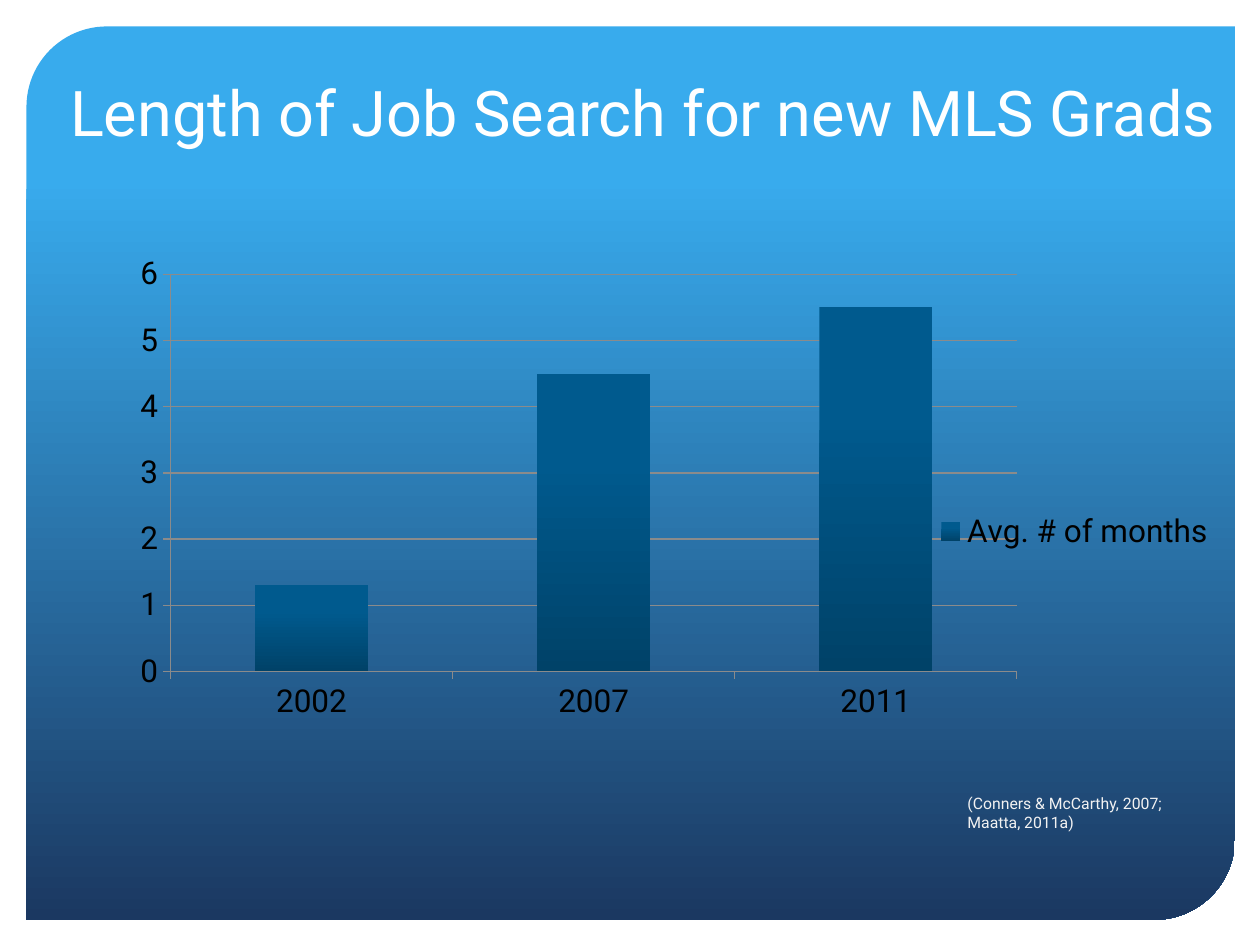
from lxml import etree
from pptx import Presentation
from pptx.chart.data import CategoryChartData
from pptx.dml.color import RGBColor
from pptx.enum.chart import XL_CHART_TYPE as ChartType, XL_LEGEND_POSITION as LegendPos, XL_TICK_MARK as Tick
from pptx.enum.shapes import MSO_SHAPE as Preset
from pptx.enum.text import MSO_ANCHOR as Anchor, MSO_AUTO_SIZE as AutoSize, PP_ALIGN as Align
from pptx.oxml.ns import qn
from pptx.util import Inches, Pt

COLORS = {
    "panel_top": "38ABED", "panel_bottom": "1B3861",
    "bar_top": "005A8E", "bar_bottom": "004268",
    "grid": "8B8B8B", "title": "FFFFFF", "citation": "F2F2F2", "label": "000000",
}
FONT = "Roboto"


class SlideBuilder:
    """Holds the style and the current slide."""

    def __init__(self, slide):
        self.slide = slide

    def color(self, name):
        return RGBColor.from_string(COLORS[name])

    def style_font(self, font, size, color):
        font.name, font.size = FONT, Pt(size)
        font.color.rgb = self.color(color)

    def gradient(self, fill, top, bottom, start):
        """Vertical gradient that begins to change at the given share."""
        fill.gradient()
        fill.gradient_angle = 270
        for stop, name, position in zip(fill.gradient_stops, (top, bottom), (start, 1)):
            stop.color.rgb = self.color(name)
            stop.position = position

    def panel(self, left, top, width, height, rounding):
        panel = self.slide.shapes.add_shape(
            Preset.ROUND_2_DIAG_RECTANGLE, *map(Inches, (left, top, width, height)))
        panel.shadow.inherit = False
        panel.adjustments[0] = rounding
        self.gradient(panel.fill, "panel_top", "panel_bottom", 0.17)
        panel.line.fill.background()

    def text(self, words, left, top, width, height, size, color, align=Align.LEFT,
             anchor=Anchor.TOP, bottom=0.05, fit=AutoSize.NONE):
        frame = self.slide.shapes.add_textbox(
            *map(Inches, (left, top, width, height))).text_frame
        frame.word_wrap = True
        frame.auto_size = fit
        frame.vertical_anchor = anchor
        frame.margin_bottom = Inches(bottom)
        paragraph = frame.paragraphs[0]
        paragraph.text = words
        paragraph.alignment = align
        self.style_font(paragraph.font, size, color)

    def column_chart(self, left, top, width, height, series_name, values, plot_area):
        data = CategoryChartData()
        data.categories = list(values)
        data.add_series(series_name, values.values())
        chart = self.slide.shapes.add_chart(
            ChartType.COLUMN_CLUSTERED, *map(Inches, (left, top, width, height)), data).chart
        self.style_font(chart.font, 18, "label")
        chart.has_title = False

        # Legend
        chart.has_legend = True
        chart.legend.position = LegendPos.RIGHT
        chart.legend.include_in_layout = False

        # Columns
        columns = chart.plots[0]
        columns.vary_by_categories = False
        columns.gap_width = 150
        self.gradient(columns.series[0].format.fill, "bar_top", "bar_bottom", 0.3)

        # Axes and gridlines
        scale = chart.value_axis
        scale.minimum_scale, scale.maximum_scale, scale.major_unit = 0, 6, 1
        scale.has_major_gridlines = True
        for axis in (chart.category_axis, scale):
            axis.major_tick_mark = Tick.OUTSIDE
        for part in (chart.category_axis, scale, scale.major_gridlines):
            part.format.line.color.rgb = self.color("grid")
            part.format.line.width = Pt(0.75)

        self.place_plot(columns, plot_area)

    def place_plot(self, plot, area):
        """Fix the inner plot area as shares of the chart."""
        plot_xml = plot._element.getparent()
        for old in plot_xml.findall(qn("c:layout")):
            plot_xml.remove(old)
        layout = etree.Element(qn("c:layout"))
        plot_xml.insert(0, layout)
        manual = etree.SubElement(layout, qn("c:manualLayout"))
        settings = [("layoutTarget", "inner"), ("xMode", "edge"), ("yMode", "edge")]
        for tag, value in settings + list(zip("xywh", area)):
            etree.SubElement(manual, qn(f"c:{tag}")).set("val", str(value))


def main():
    deck = Presentation()
    deck.slide_width, deck.slide_height = Inches(10), Inches(7.5)
    builder = SlideBuilder(deck.slides.add_slide(deck.slide_layouts[6]))

    # Background panel
    builder.panel(0.21, 0.21, 9.59, 7.09, rounding=0.09)

    # Title
    builder.text("Length of Job Search for new MLS Grads", 0.42, 0.64, 9.33, 1.17,
                 36, "title", Align.RIGHT, Anchor.BOTTOM, bottom=0.63)

    # Job search chart
    builder.column_chart(0.42, 2, 9.33, 4.44, "Avg. # of months",
                         {"2002": 1.3, "2007": 4.5, "2011": 5.5},
                         plot_area=(0.1, 0.04, 0.72, 0.71))

    # Citation
    builder.text("(Conners & McCarthy, 2007; Maatta, 2011a)", 7.58, 6.25, 1.75, 0.4,
                 9, "citation", fit=AutoSize.SHAPE_TO_FIT_TEXT)

    deck.save("out.pptx")


if __name__ == "__main__":
    main()
